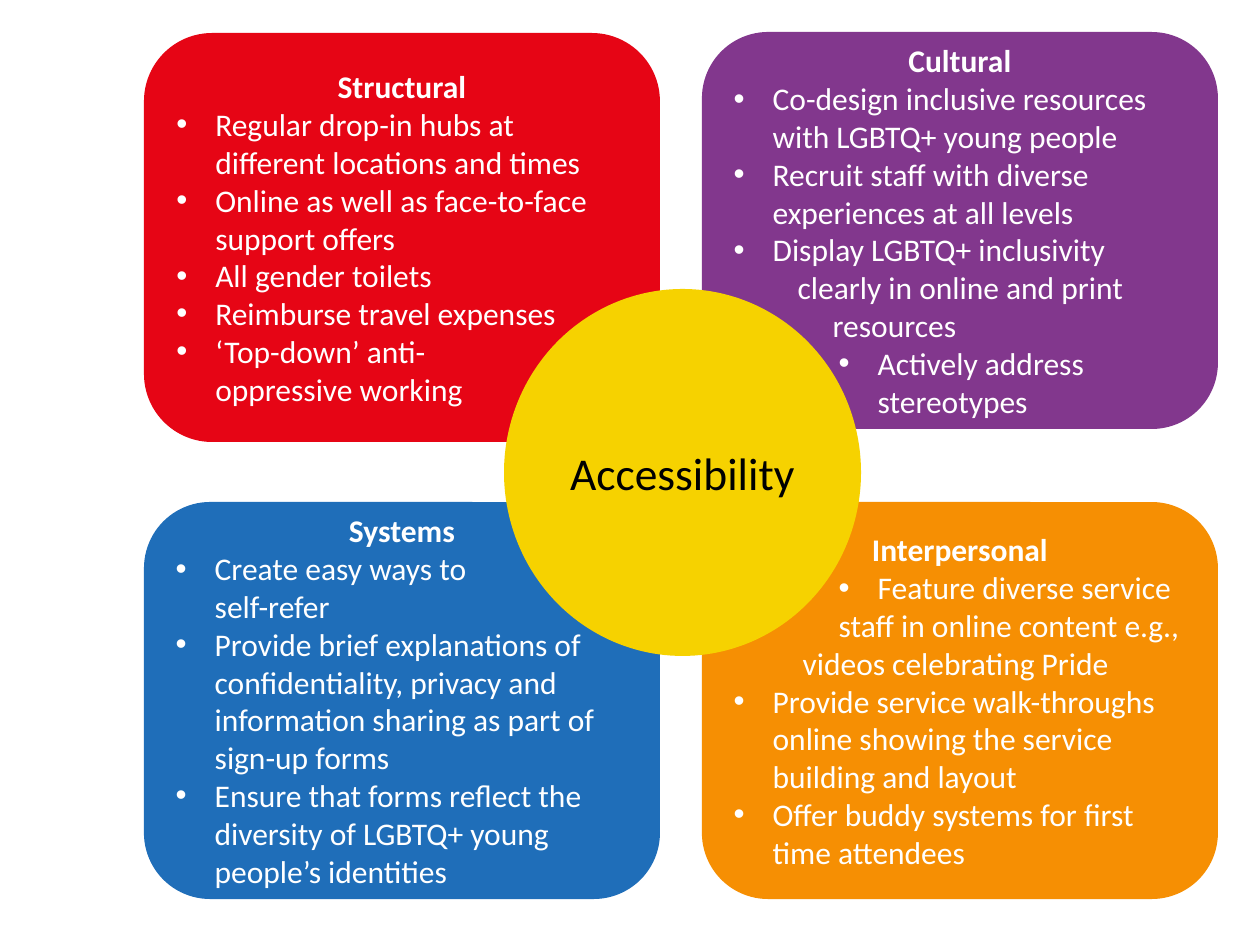
from dataclasses import dataclass

from lxml import etree
from pptx import Presentation
from pptx.dml.color import RGBColor
from pptx.enum.shapes import MSO_SHAPE
from pptx.enum.text import MSO_ANCHOR, PP_ALIGN
from pptx.oxml.ns import qn
from pptx.util import Emu, Pt

ROUNDED = MSO_SHAPE.ROUNDED_RECTANGLE
OVAL = MSO_SHAPE.OVAL
MIDDLE = MSO_ANCHOR.MIDDLE
CENTER, LEFT = PP_ALIGN.CENTER, PP_ALIGN.LEFT

PX = 914400 / 126
HANGING = 39
LEFT_COLUMN, RIGHT_COLUMN = 144, 702
PANEL_WIDTH, PANEL_HEIGHT = 516, 397
BOTTOM_ROW = 502
WHITE, BLACK = "FFFFFF", "000000"


@dataclass
class Line:
    text: str
    margin: int = HANGING
    bullet: bool = True


@dataclass
class Panel:
    title: str
    color: str
    left: int
    top: int
    lines: list[Line]
    height: int = PANEL_HEIGHT


PANELS = [
    Panel("Structural", "E60515", LEFT_COLUMN, 33, [
        Line("Regular drop-in hubs at different locations and times"),
        Line("Online as well as face-to-face support offers"),
        Line("All gender toilets"),
        Line("Reimburse travel expenses"),
        Line("‘Top-down’ anti-"),
        Line("oppressive working", bullet=False),
    ], height=409),
    Panel("Cultural", "82378D", RIGHT_COLUMN, 32, [
        Line("Co-design inclusive resources with LGBTQ+ young people"),
        Line("Recruit staff with diverse experiences at all levels"),
        Line("Display LGBTQ+ inclusivity"),
        Line("clearly in online and print", 64, False),
        Line("resources", 99, False),
        Line("Actively address stereotypes", 144),
    ]),
    Panel("Systems", "1F6EB9", LEFT_COLUMN, BOTTOM_ROW, [
        Line("Create easy ways to"),
        Line("self-refer", bullet=False),
        Line("Provide brief explanations of confidentiality, privacy and "
             "information sharing as part of sign-up forms"),
        Line("Ensure that forms reflect the diversity of LGBTQ+ young "
             "people’s identities"),
    ]),
    Panel("Interpersonal", "F68F03", RIGHT_COLUMN, BOTTOM_ROW, [
        Line("Feature diverse service", 144),
        Line("staff in online content e.g.,", 105, False),
        Line("videos celebrating Pride", 69, False),
        Line("Provide service walk-throughs online showing the service "
             "building and layout"),
        Line("Offer buddy systems for first time attendees"),
    ]),
]


def px(length: int) -> Emu:
    return Emu(round(length * PX))


def rgb(color: str) -> RGBColor:
    return RGBColor.from_string(color)


def add_filled_shape(slide, kind, left: int, top: int, width: int,
                     height: int, color: str):
    shape = slide.shapes.add_shape(kind, px(left), px(top), px(width), px(height))
    shape.shadow.inherit = False
    shape.fill.solid()
    shape.fill.fore_color.rgb = rgb(color)
    shape.line.fill.background()
    shape.text_frame.word_wrap = True
    shape.text_frame.vertical_anchor = MIDDLE
    return shape


def write(paragraph, text: str, size: int, color: str, bold: bool = False,
          align=LEFT) -> None:
    paragraph.text = text
    paragraph.alignment = align
    font = paragraph.font
    font.name = "Calibri"
    font.size = Pt(size)
    font.bold = bold
    font.color.rgb = rgb(color)


def indent(paragraph, line: Line) -> None:
    properties = paragraph._p.get_or_add_pPr()
    properties.set("marL", str(px(line.margin)))
    properties.set("indent", str(px(-HANGING if line.bullet else 0)))
    if line.bullet:
        bullet_font = etree.SubElement(properties, qn("a:buFont"))
        bullet_font.set("typeface", "Arial")
        etree.SubElement(properties, qn("a:buChar")).set("char", "•")


def draw_panel(slide, panel: Panel) -> None:
    shape = add_filled_shape(slide, ROUNDED, panel.left, panel.top,
                             PANEL_WIDTH, panel.height, panel.color)
    frame = shape.text_frame
    write(frame.paragraphs[0], panel.title, 18, WHITE, bold=True, align=CENTER)
    for line in panel.lines:
        paragraph = frame.add_paragraph()
        indent(paragraph, line)
        write(paragraph, line.text, 18, WHITE)


def main() -> None:
    presentation = Presentation()
    presentation.slide_width = px(1260)
    presentation.slide_height = px(945)
    slide = presentation.slides.add_slide(presentation.slide_layouts[6])
    for panel in PANELS:
        draw_panel(slide, panel)
    hub = add_filled_shape(slide, OVAL, 504, 289, 357, 367, "F6D200")
    write(hub.text_frame.paragraphs[0], "Accessibility", 26, BLACK, align=CENTER)
    presentation.save("out.pptx")


if __name__ == "__main__":
    main()
